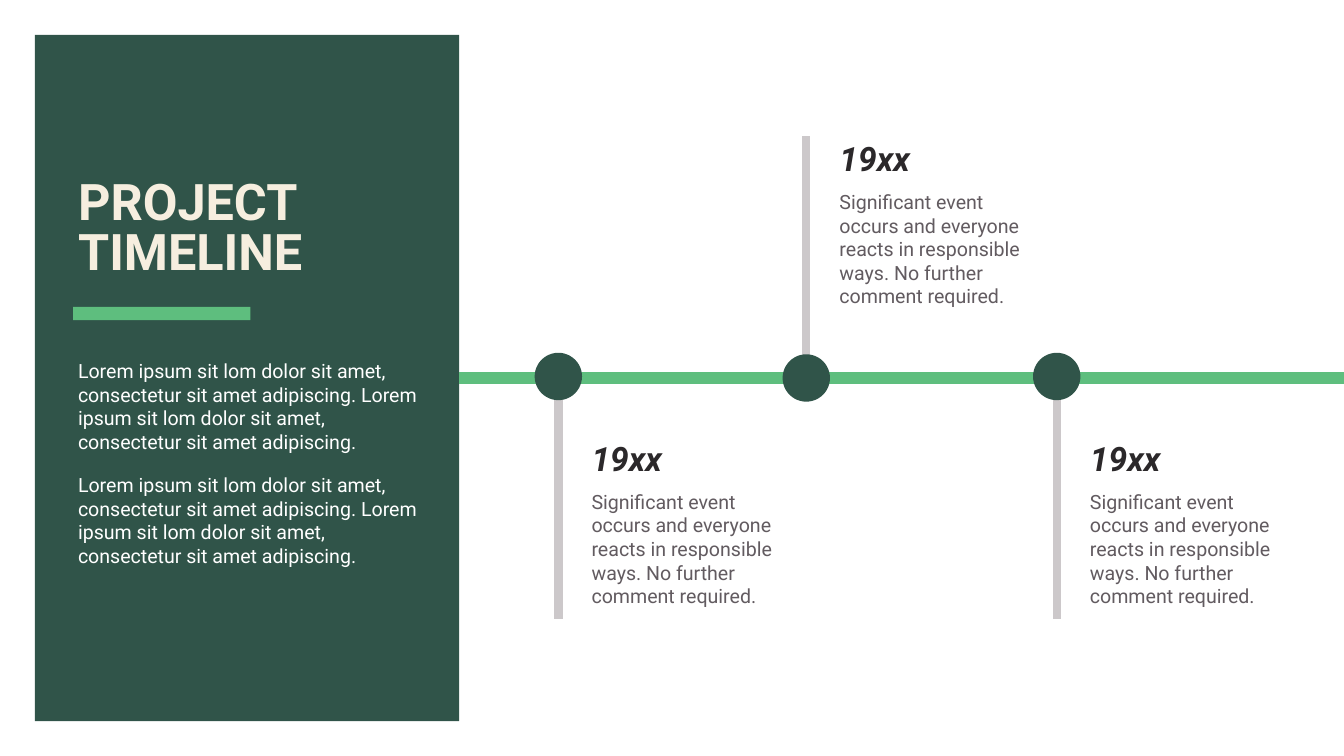
from lxml.etree import SubElement
from pptx import Presentation
from pptx.dml.color import RGBColor
from pptx.enum.shapes import MSO_CONNECTOR, MSO_SHAPE
from pptx.enum.text import MSO_ANCHOR as Anchor, MSO_AUTO_SIZE as AutoSize, PP_ALIGN as Align
from pptx.oxml.ns import qn
from pptx.util import Pt

PX = 9144
COLORS = {"panel": "305449", "accent": "5EBE7E", "stem": "CCC8CA", "year": "2B282A",
          "detail": "625B60", "title": "F6EEDF", "intro": "FFFFFF"}
INTRO = ("Lorem ipsum sit lom dolor sit amet, consectetur sit amet adipiscing. "
         "Lorem ipsum sit lom dolor sit amet, consectetur sit amet adipiscing.")
DETAIL = ("Significant event occurs and everyone reacts in responsible ways. "
          "No further comment required.")
EVENTS = [(1108, 747, 1228), (1600, 750, 269), (2097, 747, 1228)]


def px(*lengths):
    """Turn px lengths into EMU."""
    return [length * PX for length in lengths]


def color(name):
    """Look up a named colour."""
    return RGBColor.from_string(COLORS[name])


def add_block(page, kind, box, fill):
    """Add a flat filled shape."""
    block = page.shapes.add_shape(kind, *px(*box))
    block.shadow.inherit = False
    block.fill.solid()
    block.fill.fore_color.rgb = color(fill)
    block.line.fill.background()
    return block


def add_rule(page, start, end, name, width):
    """Add a flat straight line."""
    rule = page.shapes.add_connector(MSO_CONNECTOR.STRAIGHT, *px(*start, *end))
    rule.line.color.rgb = color(name)
    rule.line.width = Pt(width)
    SubElement(rule.element.spPr, qn("a:effectLst"))
    return rule


def format_paragraph(para, size, name, bold=False, italic=False):
    """Set the font of every run in a paragraph."""
    para.alignment = Align.LEFT
    for span in para.runs:
        font = span.font
        font.name, font.size = "Roboto", Pt(size)
        font.bold, font.italic = bold, italic
        font.color.rgb = color(name)


def add_text(page, box, text, size, name, after=0, **style):
    """Add a wrapped text box with one paragraph per line of text."""
    frame = page.shapes.add_textbox(*px(*box)).text_frame
    frame.word_wrap = True
    frame.text = text
    for para in frame.paragraphs:
        para.space_after = Pt(after)
        format_paragraph(para, size, name, **style)


def add_title(page, panel, box):
    """Place the title placeholder in front of the panel."""
    title = page.shapes.title
    panel.element.addnext(title.element)
    title.left, title.top, title.width, title.height = px(*box)
    frame = title.text_frame
    frame.text = "PROJECT\vTIMELINE"
    frame.word_wrap = True
    frame.auto_size = AutoSize.NONE
    frame.vertical_anchor = Anchor.BOTTOM
    para = frame.paragraphs[0]
    para.line_spacing = Pt(72)
    format_paragraph(para, 72, "title", bold=True)


def add_panel(page, left, top, width, height):
    """Build the side panel with title, accent bar and introduction."""
    panel = add_block(page, MSO_SHAPE.RECTANGLE, (left, top, width, height), "panel")
    inner = left + 76
    add_title(page, panel, (inner, top + 278, 703, 215))
    add_block(page, MSO_SHAPE.RECTANGLE, (inner, top + 540, 352, 26), "accent")
    add_text(page, (inner, top + 639, 703, 426), f"{INTRO}\n{INTRO}", 28, "intro", after=28)
    return panel


def add_event(page, x, y, stem_end):
    """Build one event: stem, dot, year and detail, above or below the axis."""
    add_rule(page, (x, y), (x, stem_end), "stem", 12)
    add_block(page, MSO_SHAPE.OVAL, (x - 47, y - 47, 94, 94), "panel")
    left, top = x + 56, min(stem_end, 864)
    add_text(page, (left, top, 381, 91), "19xx", 48, "year", bold=True, italic=True)
    add_text(page, (left, top + 103, 395, 246), DETAIL, 28, "detail")


def main():
    """Build the project timeline slide."""
    deck = Presentation()
    deck.slide_width, deck.slide_height = px(2667, 1500)
    page = deck.slides.add_slide(deck.slide_layouts[5])
    panel = add_panel(page, 69, 69, 842, 1362)
    axis = add_rule(page, (911, 750), (2667, 750), "accent", 16)
    axis.begin_connect(panel, 3)
    for x, y, stem_end in EVENTS:
        add_event(page, x, y, stem_end)
    deck.save("out.pptx")


if __name__ == "__main__":
    main()
